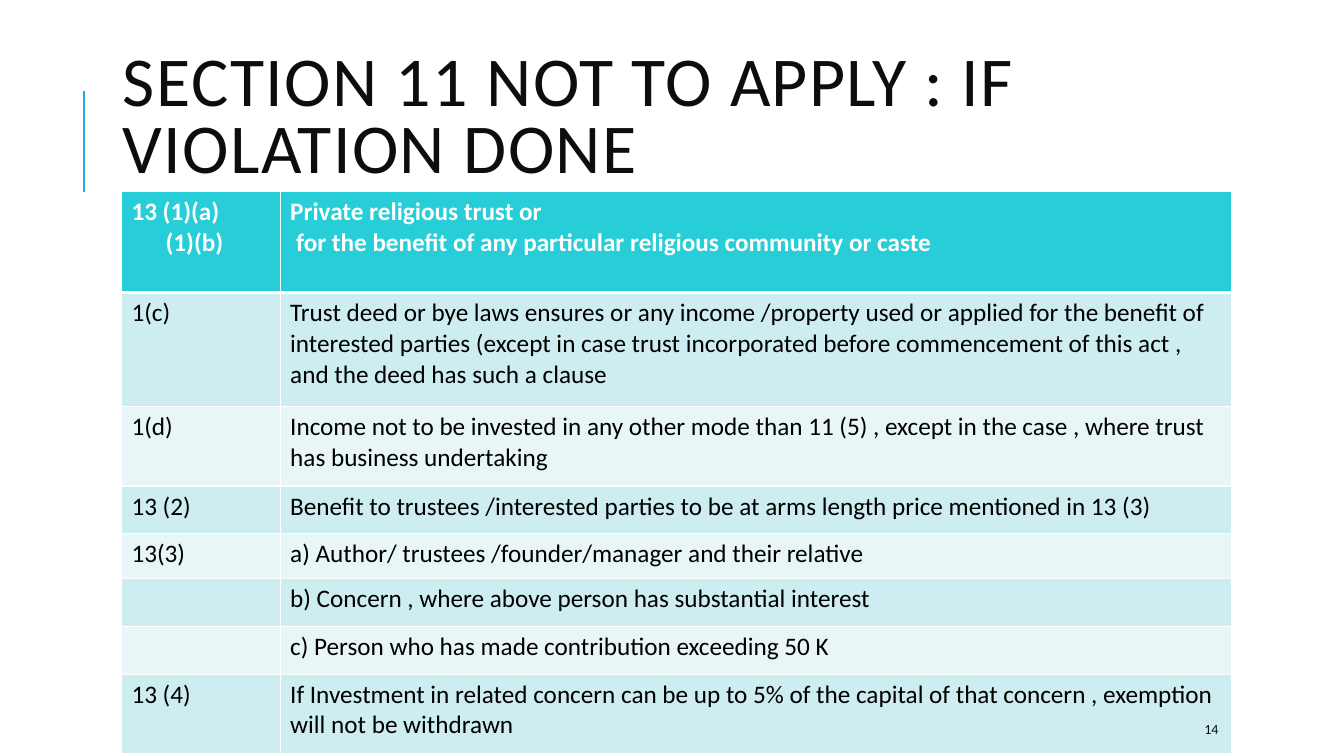
from lxml.etree import SubElement
from pptx import Presentation
from pptx.dml.color import RGBColor
from pptx.enum.shapes import MSO_CONNECTOR
from pptx.enum.text import MSO_ANCHOR, MSO_AUTO_SIZE, PP_ALIGN
from pptx.oxml.ns import qn
from pptx.util import Cm, Pt

FONT = "Calibri"
COLORS = {
    "text": "0D0D0D",
    "body": "000000",
    "white": "FFFFFF",
    "accent": "1CADE4",
    "header": "27CED7",
    "band_dark": "CDEDF0",
    "band_light": "E8F6F8",
}
TITLE = "SECTION 11 NOT TO APPLY : IF VIOLATION DONE"
COLUMN_WIDTHS = [4, 23.97]
HEADER_INDENTS = [0.86, 0.15]
ROWS = [
    (2.55, "13 (1)(a)\n(1)(b)",
     "Private religious trust or\n"
     "for the benefit of any particular religious community or caste"),
    (2.87, "1(c)",
     "Trust deed or bye laws ensures or any income /property used or applied "
     "for the benefit of interested parties (except in case trust incorporated "
     "before commencement of this act , and the deed has such a clause"),
    (2.01, "1(d)",
     "Income not to be invested in any other mode than 11 (5) , except in the "
     "case , where trust has business undertaking"),
    (1.2, "13 (2)",
     "Benefit to trustees /interested parties to be at arms length price "
     "mentioned in 13 (3)"),
    (1.14, "13(3)", "a) Author/ trustees /founder/manager and their relative"),
    (1.2, "", "b) Concern , where above person has substantial interest"),
    (1.2, "", "c) Person who has made contribution exceeding 50 K"),
    (2.01, "13 (4)",
     "If Investment in related concern can be up to 5% of the capital of that "
     "concern , exemption will not be withdrawn"),
]


def rgb(name):
    return RGBColor.from_string(COLORS[name])


def write_text(tf, text, size=18, color="body", bold=False, line_spacing=None,
               tracking=None, indent=0):
    tf.word_wrap = True
    for i, line in enumerate(text.split("\n")):
        p = tf.paragraphs[0] if i == 0 else tf.add_paragraph()
        p.alignment = PP_ALIGN.LEFT
        if line_spacing:
            p.line_spacing = line_spacing
        if i and indent:
            p._p.get_or_add_pPr().set("marL", str(Cm(indent)))
        if not line:
            p.font.size = Pt(size)
            continue
        r = p.add_run()
        r.text = line
        r.font.name = FONT
        r.font.size = Pt(size)
        r.font.bold = bold
        r.font.color.rgb = rgb(color)
        if tracking:
            r._r.get_or_add_rPr().set("spc", str(int(tracking * 100)))


def set_borders(cell, widths):
    tcPr = cell._tc.get_or_add_tcPr()
    for side, width in zip("LRTB", widths):
        ln = SubElement(tcPr, qn(f"a:ln{side}"), w=str(Pt(width)))
        fill = SubElement(ln, qn("a:solidFill"))
        SubElement(fill, qn("a:srgbClr"), val=COLORS["white"])


def add_accent_line(s, x, top, height):
    line = s.shapes.add_connector(
        MSO_CONNECTOR.STRAIGHT, Cm(x), Cm(top + height), Cm(x), Cm(top))
    line.line.color.rgb = rgb("accent")
    line.line.width = Pt(1.5)
    SubElement(line._element.spPr, qn("a:effectLst"))


def add_title(s, left, top, width, height):
    sp = s.shapes.title
    sp.left, sp.top, sp.width, sp.height = map(Cm, (left, top, width, height))
    tf = sp.text_frame
    tf.auto_size = MSO_AUTO_SIZE.NONE
    tf.vertical_anchor = MSO_ANCHOR.MIDDLE
    write_text(tf, TITLE, size=50, color="text", line_spacing=0.8, tracking=1)


def add_rules_table(s, left, top):
    heights = [row[0] for row in ROWS]
    table = s.shapes.add_table(
        len(ROWS), len(COLUMN_WIDTHS), Cm(left), Cm(top),
        Cm(sum(COLUMN_WIDTHS)), Cm(sum(heights))).table
    for column, width in zip(table.columns, COLUMN_WIDTHS):
        column.width = Cm(width)
    for i, (height, *texts) in enumerate(ROWS):
        table.rows[i].height = Cm(height)
        is_header = i == 0
        band = "header" if is_header else "band_dark" if i % 2 else "band_light"
        for j, text in enumerate(texts):
            cell = table.cell(i, j)
            set_borders(cell, (1, 1, 3 if i == 1 else 1, 3 if is_header else 1))
            cell.fill.solid()
            cell.fill.fore_color.rgb = rgb(band)
            write_text(cell.text_frame, text, bold=is_header,
                       color="white" if is_header else "body",
                       indent=HEADER_INDENTS[j])


def add_slide_number(s, left, top, width, height):
    sp = s.shapes.add_textbox(*map(Cm, (left, top, width, height)))
    sp.text_frame.vertical_anchor = MSO_ANCHOR.MIDDLE
    write_text(sp.text_frame, "14", size=10, color="text")


def main():
    prs = Presentation()
    prs.slide_width, prs.slide_height = Cm(33.87), Cm(19.05)
    s = prs.slides.add_slide(prs.slide_layouts[5])
    add_accent_line(s, 2.12, 2.3, 2.54)
    add_title(s, 2.84, 1.63, 26.87, 2.79)
    add_rules_table(s, 3.06, 4.82)
    add_slide_number(s, 30.1, 17.98, 2.69, 0.76)
    prs.save("out.pptx")


if __name__ == "__main__":
    main()
